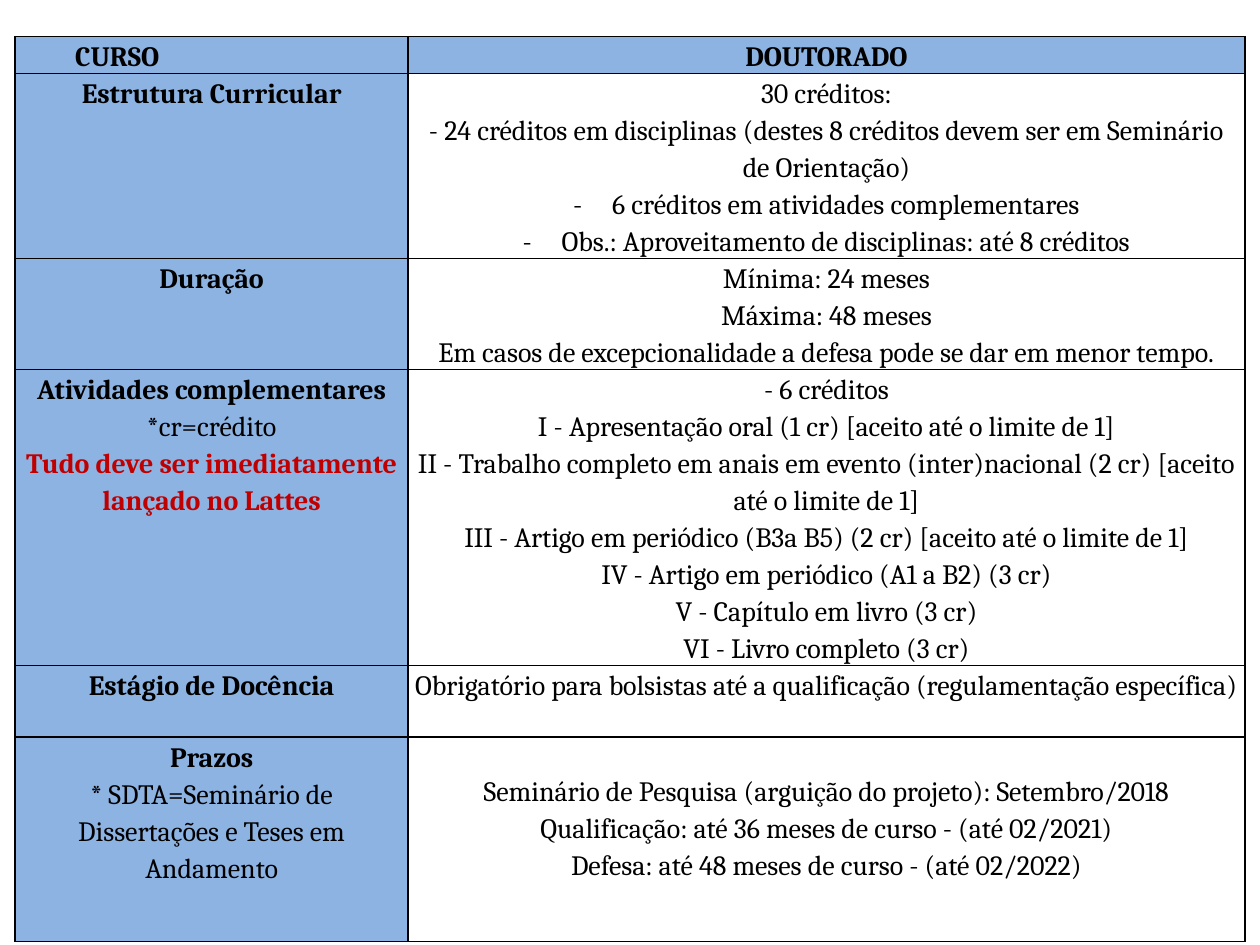
from dataclasses import dataclass

from lxml.etree import SubElement
from pptx import Presentation
from pptx.dml.color import RGBColor
from pptx.enum.text import PP_ALIGN
from pptx.oxml.ns import qn
from pptx.util import Inches, Pt


@dataclass(frozen=True)
class Theme:
    """Colours and type settings of the slide."""
    black: str = "000000"
    red: str = "C00000"
    blue: str = "8DB3E2"
    font: str = "Cambria"
    size: int = 16
    line_spacing: float = 1.15
    border: int = 1


@dataclass(frozen=True)
class Line:
    """One paragraph of a cell."""
    text: str
    bold: bool = False
    color: str = Theme.black
    bullet: bool = False
    tabs: tuple = ()


THEME = Theme()
COLUMN_WIDTHS = (3.12, 6.64)
ROW_HEIGHTS = (0.28, 1.17, 0.87, 2.35, 0.57, 1.62)
DEADLINE_TOP_MARGIN = 0.27
ROWS = (
    ((Line("\tCURSO\t", bold=True, tabs=((0.76, "ctr"), (1.52, "r"))),),
     (Line("DOUTORADO", bold=True),)),
    ((Line("Estrutura Curricular", bold=True),),
     (Line("30 créditos:"),
      Line("- 24 créditos em disciplinas (destes 8 créditos devem ser em Seminário de Orientação)"),
      Line("6 créditos em atividades complementares", bullet=True),
      Line("Obs.: Aproveitamento de disciplinas: até 8 créditos", bullet=True))),
    ((Line("Duração", bold=True),),
     (Line("Mínima: 24 meses"),
      Line("Máxima: 48 meses"),
      Line("Em casos de excepcionalidade a defesa pode se dar em menor tempo."))),
    ((Line("Atividades complementares", bold=True),
      Line("*cr=crédito"),
      Line("Tudo deve ser imediatamente lançado no Lattes", bold=True, color=THEME.red)),
     (Line("- 6 créditos"),
      Line("I - Apresentação oral (1 cr) [aceito até o limite de 1]"),
      Line("II - Trabalho completo em anais em evento (inter)nacional (2 cr) [aceito até o limite de 1]"),
      Line("III - Artigo em periódico (B3a B5) (2 cr) [aceito até o limite de 1]"),
      Line("IV - Artigo em periódico (A1 a B2) (3 cr)"),
      Line("V - Capítulo em livro (3 cr)"),
      Line("VI - Livro completo (3 cr)"))),
    ((Line("Estágio de Docência", bold=True),),
     (Line("Obrigatório para bolsistas até a qualificação (regulamentação específica)"),)),
    ((Line("Prazos", bold=True),
      Line("* SDTA=Seminário de Dissertações e Teses em Andamento")),
     (Line("Seminário de Pesquisa (arguição do projeto): Setembro/2018"),
      Line("Qualificação: até 36 meses de curso - (até 02/2021)"),
      Line("Defesa: até 48 meses de curso - (até 02/2022)"))),
)


def add_bullet(paragraph):
    """Give the paragraph a hanging dash."""
    properties = paragraph._p.get_or_add_pPr()
    properties.set("marL", str(Inches(0.31)))
    properties.set("indent", str(Inches(-0.31)))
    SubElement(properties, qn("a:buFont"), typeface=THEME.font)
    SubElement(properties, qn("a:buChar"), char="-")


def add_tabs(paragraph, tabs):
    """Add tab stops to the paragraph."""
    tab_list = SubElement(paragraph._p.get_or_add_pPr(), qn("a:tabLst"))
    for position, alignment in tabs:
        SubElement(tab_list, qn("a:tab"), pos=str(Inches(position)), algn=alignment)


def write_line(paragraph, line):
    """Write and format one paragraph."""
    paragraph.text = line.text
    paragraph.alignment = PP_ALIGN.LEFT if line.tabs else PP_ALIGN.CENTER
    paragraph.line_spacing = THEME.line_spacing
    if line.bullet:
        add_bullet(paragraph)
    if line.tabs:
        add_tabs(paragraph, line.tabs)
    font = paragraph.font
    font.name = THEME.font
    font.size = Pt(THEME.size)
    font.bold = line.bold
    font.color.rgb = RGBColor.from_string(line.color)


def add_borders(cell):
    """Draw the four borders of a cell."""
    properties = cell._tc.get_or_add_tcPr()
    for index, side in enumerate(("lnL", "lnR", "lnT", "lnB")):
        border = SubElement(properties, qn(f"a:{side}"), w=str(Pt(THEME.border)))
        properties.insert(index, border)
        fill = SubElement(border, qn("a:solidFill"))
        SubElement(fill, qn("a:srgbClr"), val=THEME.black)


def fill_cell(cell, lines, shaded):
    """Set the margins, fill, borders and text of a cell."""
    cell.margin_left = cell.margin_right = Inches(0.05)
    cell.margin_top = cell.margin_bottom = 0
    if shaded:
        cell.fill.solid()
        cell.fill.fore_color.rgb = RGBColor.from_string(THEME.blue)
    else:
        cell.fill.background()
    add_borders(cell)
    frame = cell.text_frame
    for index, line in enumerate(lines):
        write_line(frame.add_paragraph() if index else frame.paragraphs[0], line)


def add_course_table(slide):
    """Add the table of course rules."""
    table = slide.shapes.add_table(
        len(ROWS), len(COLUMN_WIDTHS), Inches(0.12), Inches(0.29),
        Inches(sum(COLUMN_WIDTHS)), Inches(sum(ROW_HEIGHTS))).table
    table.first_row = table.horz_banding = False
    for column, width in zip(table.columns, COLUMN_WIDTHS):
        column.width = Inches(width)
    for row_index, (row, height) in enumerate(zip(table.rows, ROW_HEIGHTS)):
        row.height = Inches(height)
        for column_index, lines in enumerate(ROWS[row_index]):
            shaded = row_index == 0 or column_index == 0
            fill_cell(row.cells[column_index], lines, shaded)
    table.cell(len(ROWS) - 1, 1).margin_top = Inches(DEADLINE_TOP_MARGIN)


def main():
    """Build and save the presentation."""
    presentation = Presentation()
    presentation.slide_width = Inches(10)
    presentation.slide_height = Inches(7.5)
    slide = presentation.slides.add_slide(presentation.slide_layouts[6])
    add_course_table(slide)
    presentation.save("out.pptx")


if __name__ == "__main__":
    main()
